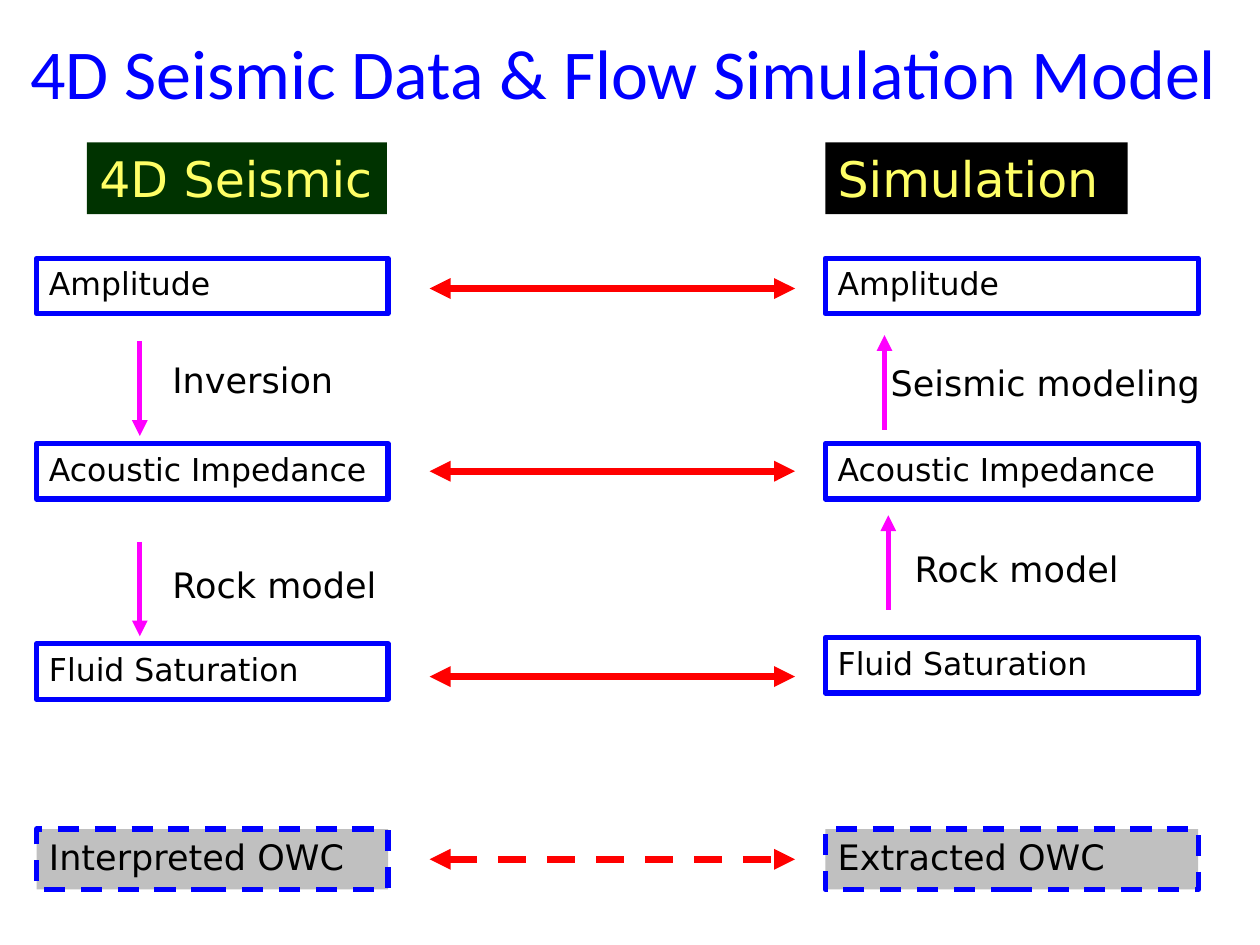
from dataclasses import dataclass

from lxml import etree
from pptx import Presentation
from pptx.dml.color import RGBColor
from pptx.enum.dml import MSO_LINE
from pptx.enum.shapes import MSO_CONNECTOR, MSO_SHAPE
from pptx.enum.text import MSO_ANCHOR, MSO_AUTO_SIZE, PP_ALIGN
from pptx.oxml.ns import qn
from pptx.util import Inches, Pt

RECTANGLE = MSO_SHAPE.RECTANGLE
STRAIGHT = MSO_CONNECTOR.STRAIGHT
DASH = MSO_LINE.DASH
LEFT = PP_ALIGN.LEFT
TOP, MIDDLE = MSO_ANCHOR.TOP, MSO_ANCHOR.MIDDLE
NO_AUTOFIT = MSO_AUTO_SIZE.NONE
TITLE_ONLY = 5


@dataclass(frozen=True)
class Theme:
    blue: str = "0000FF"
    red: str = "FF0000"
    magenta: str = "FF00FF"
    black: str = "000000"
    green: str = "003300"
    yellow: str = "FFFF66"
    grey: str = "C0C0C0"
    title_font: str = "Calibri"
    body_font: str = "DejaVu Sans"
    title_size: int = 40
    heading_size: int = 28
    label_size: int = 20
    stage_size: int = 18
    box_line: int = 3
    match_line: int = 4


THEME = Theme()
TITLE = "4D Seismic Data & Flow Simulation Model"
STAGES = ["Amplitude", "Acoustic Impedance", "Fluid Saturation"]
STAGE_HEIGHT, RESULT_TOP, RESULT_HEIGHT = 0.44, 6.58, 0.48
HEADING_TOP, HEADING_HEIGHT = 1.13, 0.57
LABEL_HEIGHT, STEP_LENGTH = 0.43, 0.75

COLUMNS = [
    {
        "heading": ("4D Seismic", 0.69, 2.38, THEME.green),
        "left": 0.29, "width": 2.79, "stage_tops": [2.05, 3.52, 5.11],
        "result": "Interpreted OWC", "upward": False,
        "steps": [("Inversion", 1.27, 2.8, 2.35, 1.11, 2.71),
                  ("Rock model", 1.27, 4.42, 2.35, 1.11, 4.3)],
    },
    {
        "heading": ("Simulation", 6.55, 2.4, THEME.black),
        "left": 6.55, "width": 2.96, "stage_tops": [2.05, 3.52, 5.06],
        "result": "Extracted OWC", "upward": True,
        "steps": [("Seismic modeling", 6.97, 2.82, 2.75, 7.02, 2.66),
                  ("Rock model", 7.16, 4.3, 2.35, 7.05, 4.09)],
    },
]
MATCH_LEFT, MATCH_RIGHT = 3.41, 6.31
MATCHES = [(2.29, False), (3.74, False), (5.37, False), (6.82, True)]


def color(value):
    return RGBColor.from_string(value)


def write_text(shape, text, size, ink=THEME.black, font=THEME.body_font, anchor=TOP):
    frame = shape.text_frame
    frame.word_wrap = True
    frame.auto_size = NO_AUTOFIT
    frame.vertical_anchor = anchor
    para = frame.paragraphs[0]
    para.alignment = LEFT
    span = para.add_run()
    span.text = text
    span.font.name = font
    span.font.size = Pt(size)
    span.font.color.rgb = color(ink)


def add_box(page, text, left, top, width, height, size,
            fill=None, line=None, dashed=False, ink=THEME.black):
    place = [Inches(value) for value in (left, top, width, height)]
    box = page.shapes.add_shape(RECTANGLE, *place)
    box.shadow.inherit = False
    if fill:
        box.fill.solid()
        box.fill.fore_color.rgb = color(fill)
    else:
        box.fill.background()
    if line:
        box.line.color.rgb = color(line)
        box.line.width = Pt(THEME.box_line)
        if dashed:
            box.line.dash_style = DASH
    else:
        box.line.fill.background()
    write_text(box, text, size, ink=ink)


def add_label(page, text, left, top, width):
    place = [Inches(value) for value in (left, top, width, LABEL_HEIGHT)]
    write_text(page.shapes.add_textbox(*place), text, THEME.label_size)


def add_arrow(page, start, end, ink, weight, ends, dashed=False):
    points = [Inches(value) for value in (*start, *end)]
    arrow = page.shapes.add_connector(STRAIGHT, *points)
    arrow.line.color.rgb = color(ink)
    arrow.line.width = Pt(weight)
    if dashed:
        arrow.line.dash_style = DASH
    properties = arrow._element.spPr
    outline = properties.find(qn("a:ln"))
    for end_name in ends:
        etree.SubElement(outline, qn(f"a:{end_name}"), type="triangle")
    etree.SubElement(properties, qn("a:effectLst"))


def add_column(page, column):
    heading, heading_left, heading_width, heading_fill = column["heading"]
    add_box(page, heading, heading_left, HEADING_TOP, heading_width, HEADING_HEIGHT,
            THEME.heading_size, fill=heading_fill, ink=THEME.yellow)
    left, width = column["left"], column["width"]
    for stage, top in zip(STAGES, column["stage_tops"]):
        add_box(page, stage, left, top, width, STAGE_HEIGHT,
                THEME.stage_size, line=THEME.blue)
    add_box(page, column["result"], left, RESULT_TOP, width, RESULT_HEIGHT,
            THEME.label_size, fill=THEME.grey, line=THEME.blue, dashed=True)
    ends = ["headEnd"] if column["upward"] else ["tailEnd"]
    for text, text_left, text_top, text_width, arrow_x, arrow_top in column["steps"]:
        add_arrow(page, (arrow_x, arrow_top), (arrow_x, arrow_top + STEP_LENGTH),
                  THEME.magenta, THEME.box_line, ends)
        add_label(page, text, text_left, text_top, text_width)


def main():
    deck = Presentation()
    deck.slide_width, deck.slide_height = Inches(10), Inches(7.5)
    page = deck.slides.add_slide(deck.slide_layouts[TITLE_ONLY])
    title = page.shapes.title
    title.left, title.top = Inches(0.14), Inches(0.21)
    title.width, title.height = Inches(9.65), Inches(0.71)
    write_text(title, TITLE, THEME.title_size, ink=THEME.blue,
               font=THEME.title_font, anchor=MIDDLE)
    for column in COLUMNS:
        add_column(page, column)
    for y, dashed in MATCHES:
        add_arrow(page, (MATCH_LEFT, y), (MATCH_RIGHT, y), THEME.red,
                  THEME.match_line, ["headEnd", "tailEnd"], dashed=dashed)
    deck.save("out.pptx")


if __name__ == "__main__":
    main()
